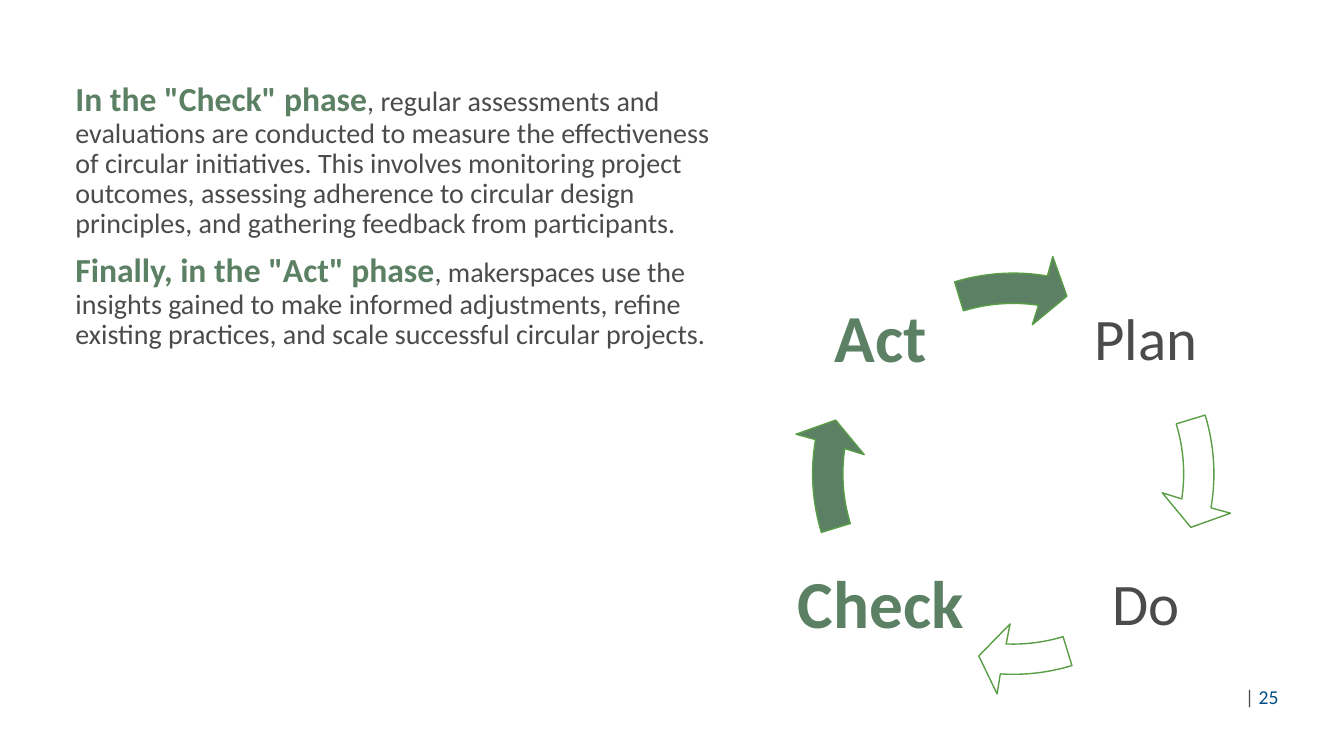
from math import cos, radians, sin, tan

from lxml.etree import SubElement
from pptx import Presentation
from pptx.dml.color import RGBColor
from pptx.enum.text import MSO_ANCHOR, PP_ALIGN
from pptx.oxml.ns import qn
from pptx.util import Inches, Pt

COLORS = {
    "green": "5C8064",
    "outline": "599D47",
    "body": "4B4B4D",
    "number": "004E84",
    "white": "FFFFFF",
}
PHASES = [
    ('In the "Check" phase',
     ", regular assessments and evaluations are conducted to measure the "
     "effectiveness of circular initiatives. This involves monitoring project "
     "outcomes, assessing adherence to circular design principles, and "
     "gathering feedback from participants."),
    ('Finally, in the "Act" phase',
     ", makerspaces use the insights gained to make informed adjustments, "
     "refine existing practices, and scale successful circular projects."),
]
STEPS = [
    ("Plan", 1, -1, 1.55, False),
    ("Do", 1, 1, 1.55, False),
    ("Check", -1, 1, 1.94, True),
    ("Act", -1, -1, 1.55, True),
]
ARROWS = [(0, 0, "white"), (90, 6.1, "white"), (180, 0, "green"), (270, 0, "green")]


def rgb(name):
    """Return the named palette colour."""
    return RGBColor.from_string(COLORS[name])


def add_text(slide, box, paragraphs, anchor=MSO_ANCHOR.TOP, align=PP_ALIGN.LEFT,
             insets=(0.1, 0.05), line_spacing=0.9, space_before=0):
    """Place paragraphs of (text, size, colour, bold) runs in a box."""
    frame = slide.shapes.add_textbox(*map(Inches, box)).text_frame
    frame.word_wrap = True
    frame.vertical_anchor = anchor
    frame.margin_left = frame.margin_right = Inches(insets[0])
    frame.margin_top = frame.margin_bottom = Inches(insets[1])
    for index, runs in enumerate(paragraphs):
        paragraph = frame.add_paragraph() if index else frame.paragraphs[0]
        paragraph.alignment = align
        paragraph.line_spacing = line_spacing
        paragraph.space_before = Pt(space_before if index else 0)
        for text, size, color, bold in runs:
            run = paragraph.add_run()
            run.text = text
            run.font.name = "Calibri"
            run.font.size = Pt(size)
            run.font.bold = bold
            run.font.color.rgb = rgb(color)


def add_phases(slide, box):
    """Write the phase descriptions with highlighted openings."""
    add_text(slide, box,
             [[(lead, 24, "green", True), (detail, 20, "body", False)]
              for lead, detail in PHASES], space_before=10)


def add_outline(slide, box, segments):
    """Add a freeform filling the box from (command, points) segments."""
    left, top, width, height = map(Inches, box)
    builder = slide.shapes.build_freeform(left, top, scale=1.0)
    builder.add_line_segments([(left + width, top), (left + width, top + height)])
    outline = builder.convert_to_shape()
    outline.left, outline.top = left, top
    outline.width, outline.height = width, height
    route = next(outline.element.iter(qn("a:path")))
    for child in list(route):
        route.remove(child)
    route.set("w", str(width))
    route.set("h", str(height))
    for command, points in segments:
        segment = SubElement(route, qn(f"a:{command}"))
        for x, y in points:
            SubElement(segment, qn("a:pt"), x=str(Inches(x)), y=str(Inches(y)))
    SubElement(route, qn("a:close"))
    return outline


def add_cycle_arrow(slide, box, middle, trim, fill):
    """Draw one curved arrow in the cycle box, its head pulled back by trim."""
    center = box[2] / 2, box[3] / 2

    def point(radius, offset, along=0):
        angle = radians(middle + offset)
        return (center[0] + radius * cos(angle) - along * sin(angle),
                center[1] + radius * sin(angle) + along * cos(angle))

    def arc(radius, start, end):
        handle = radius * 4 / 3 * tan(radians(end - start) / 4)
        return ("cubicBezTo", [point(radius, start, handle),
                               point(radius, end, -handle), point(radius, end)])

    tail, neck, inner_neck = -17, 9.8 - trim, 8.5 - trim
    head = [(2.19, 10.3), (1.84, 16.8), (1.49, 7.3)]
    corners = [point(radius, offset - trim) for radius, offset in head]
    corners.append(point(1.69, inner_neck))
    arrow = add_outline(slide, box, [
        ("moveTo", [point(1.99, tail)]),
        arc(1.99, tail, neck),
        *[("lnTo", [corner]) for corner in corners],
        arc(1.69, inner_neck, tail),
    ])
    arrow.shadow.inherit = False
    arrow.fill.solid()
    arrow.fill.fore_color.rgb = rgb(fill)
    arrow.line.color.rgb = rgb("outline")
    arrow.line.width = Pt(1)


def add_cycle(slide, box):
    """Draw the four cycle steps and the arrows between them."""
    left, top, width, height = box
    center = left + width / 2, top + height / 2
    reach, label_height = 1.315, 1.55
    for (step, across, down, label_width, active), arrow in zip(STEPS, ARROWS):
        label_box = (center[0] + across * reach - label_width / 2,
                     center[1] + down * reach - label_height / 2,
                     label_width, label_height)
        style = (48, "green", True) if active else (42, "body", False)
        inset = 0.07 if active else 0.06
        add_text(slide, label_box, [[(step, *style)]], MSO_ANCHOR.MIDDLE,
                 PP_ALIGN.CENTER, insets=(inset, inset))
        add_cycle_arrow(slide, box, *arrow)


def add_page_number(slide, box):
    """Write the page number with its divider."""
    add_text(slide, box,
             [[("| ", 14, "body", False), ("25", 14, "number", False)]],
             MSO_ANCHOR.MIDDLE, insets=(0, 0), line_spacing=1)


def main():
    """Build and save the slide."""
    deck = Presentation()
    deck.slide_width, deck.slide_height = Inches(13.33), Inches(7.5)
    slide = deck.slides.add_slide(deck.slide_layouts[6])
    add_page_number(slide, (12.35, 6.79, 0.68, 0.24))
    add_phases(slide, (0.65, 0.77, 6.56, 2.98))
    add_cycle(slide, (7.86, 2.51, 4.38, 4.38))
    deck.save("out.pptx")


if __name__ == "__main__":
    main()
